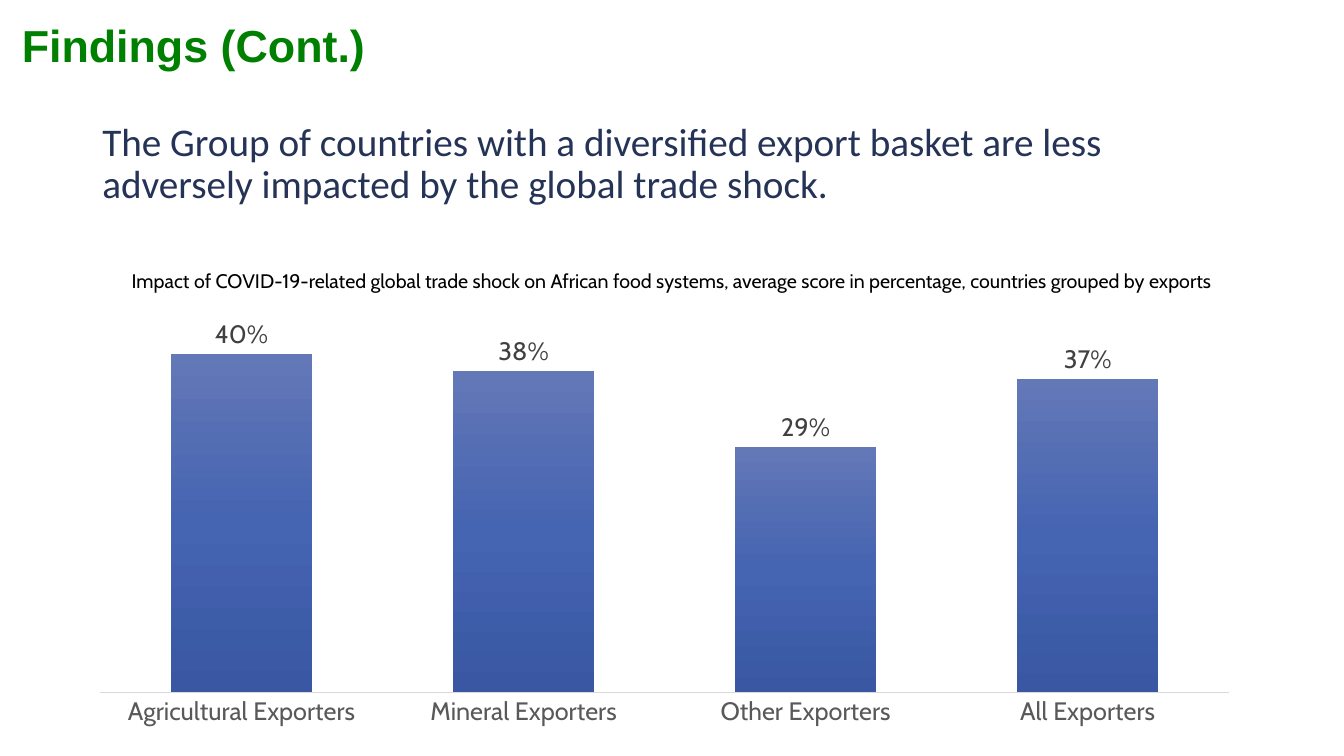
from pptx import Presentation
from pptx.chart.data import CategoryChartData as ChartData
from pptx.dml.color import RGBColor as RGB
from pptx.enum.chart import XL_CHART_TYPE as Kind
from pptx.enum.chart import XL_LABEL_POSITION as Spot
from pptx.enum.chart import XL_TICK_MARK as Tick
from pptx.enum.text import MSO_ANCHOR as Anchor
from pptx.enum.text import PP_ALIGN as Align
from pptx.oxml import parse_xml
from pptx.oxml.ns import nsdecls
from pptx.util import Pt

NAVY = RGB(0x25, 0x33, 0x56)
GREEN = RGB(0x00, 0x80, 0x00)
BLACK = RGB(0x00, 0x00, 0x00)
DARK = RGB(0x40, 0x40, 0x40)
GREY = RGB(0x59, 0x59, 0x59)
PALE = RGB(0xD9, 0xD9, 0xD9)
SHADES = (
    (0, RGB(0x63, 0x78, 0xB7)),
    (50, RGB(0x45, 0x64, 0xB1)),
    (100, RGB(0x39, 0x57, 0xA2)),
)
SCORES = {
    "Agricultural Exporters": 0.40,
    "Mineral Exporters": 0.38,
    "Other Exporters": 0.29,
    "All Exporters": 0.37,
}


def style(font, name, size, color, bold=False):
    """Set the face, size, colour and weight of a font."""
    font.name = name
    font.size = Pt(size)
    font.color.rgb = color
    font.bold = bold


def add_text(slide, box, text, face, anchor=Anchor.MIDDLE, align=Align.LEFT, lead=0.9):
    """Add a wrapped one-paragraph text box."""
    frame = slide.shapes.add_textbox(*map(Pt, box)).text_frame
    frame.word_wrap = True
    frame.vertical_anchor = anchor
    para = frame.paragraphs[0]
    para.text = text
    para.alignment = align
    para.line_spacing = lead
    style(para.font, *face)


def shade(series):
    """Fill the bars of a series with a vertical gradient."""
    stops = "".join(
        f'<a:gs pos="{at * 1000}"><a:srgbClr val="{color}"/></a:gs>'
        for at, color in SHADES
    )
    props = series.format.fill and series._element.get_or_add_spPr()
    props.insert(0, parse_xml(
        f'<a:gradFill {nsdecls("a")} rotWithShape="1"><a:gsLst>{stops}</a:gsLst>'
        '<a:lin ang="5400000" scaled="0"/></a:gradFill>'
    ))


def place(chart, x, y, w, h):
    """Fix the inner plot area as fractions of the chart."""
    area = chart._chartSpace.chart.plotArea
    for old in area.findall("{*}layout"):
        area.remove(old)
    sizes = "".join(
        f'<c:{tag} val="{val}"/>' for tag, val in zip("xywh", (x, y, w, h))
    )
    area.insert(0, parse_xml(
        f'<c:layout {nsdecls("c")}><c:manualLayout><c:layoutTarget val="inner"/>'
        f'<c:xMode val="edge"/><c:yMode val="edge"/>{sizes}'
        '</c:manualLayout></c:layout>'
    ))


def add_bars(slide, box, scores):
    """Add the column chart of scores by export group."""
    data = ChartData(number_format="0%")
    data.categories = list(scores)
    data.add_series("Series 1", list(scores.values()))
    chart = slide.shapes.add_chart(Kind.COLUMN_CLUSTERED, *map(Pt, box), data).chart
    chart.has_legend = False
    chart.has_title = False
    style(chart.font, "Cabin", 18, BLACK)
    place(chart, 0.02, 0.03, 0.96, 0.87)

    groups = chart.category_axis
    groups.major_tick_mark = Tick.NONE
    groups.format.line.color.rgb = PALE
    groups.format.line.width = Pt(1)
    style(groups.tick_labels.font, "Cabin", 18, GREY)

    scale = chart.value_axis
    scale.visible = False
    scale.has_major_gridlines = False
    scale.minimum_scale = 0
    scale.maximum_scale = 0.45
    scale.tick_labels.number_format = "0%"
    scale.tick_labels.number_format_is_linked = False

    plot = chart.plots[0]
    plot.gap_width = 100
    plot.overlap = -24
    plot.vary_by_categories = False
    shade(plot.series[0])
    labels = plot.series[0].data_labels
    labels.show_value = True
    labels.position = Spot.OUTSIDE_END
    labels.number_format = "0%"
    labels.number_format_is_linked = False
    style(labels.font, "Cabin", 18, DARK)


def main():
    """Build the findings slide and save it."""
    deck = Presentation()
    deck.slide_width = Pt(960)
    deck.slide_height = Pt(540)
    slide = deck.slides.add_slide(deck.slide_layouts[6])
    add_text(
        slide, (66, 65.5, 828, 104.5),
        "The Group of countries with a diversified export basket are less "
        "adversely impacted by the global trade shock.",
        ("Calibri", 28, NAVY),
    )
    add_bars(slide, (55, 213, 839.5, 313), SCORES)
    add_text(
        slide, (66, 188.5, 828, 24.5),
        "Impact of COVID-19-related global trade shock on African food systems, "
        "average score in percentage, countries grouped by exports",
        ("Cabin", 14, BLACK), Anchor.TOP, Align.CENTER, 1.0,
    )
    add_text(
        slide, (8.5, 8.5, 828, 51), "Findings (Cont.)", ("Arial", 32, GREEN, True)
    )
    deck.save("out.pptx")


if __name__ == "__main__":
    main()
